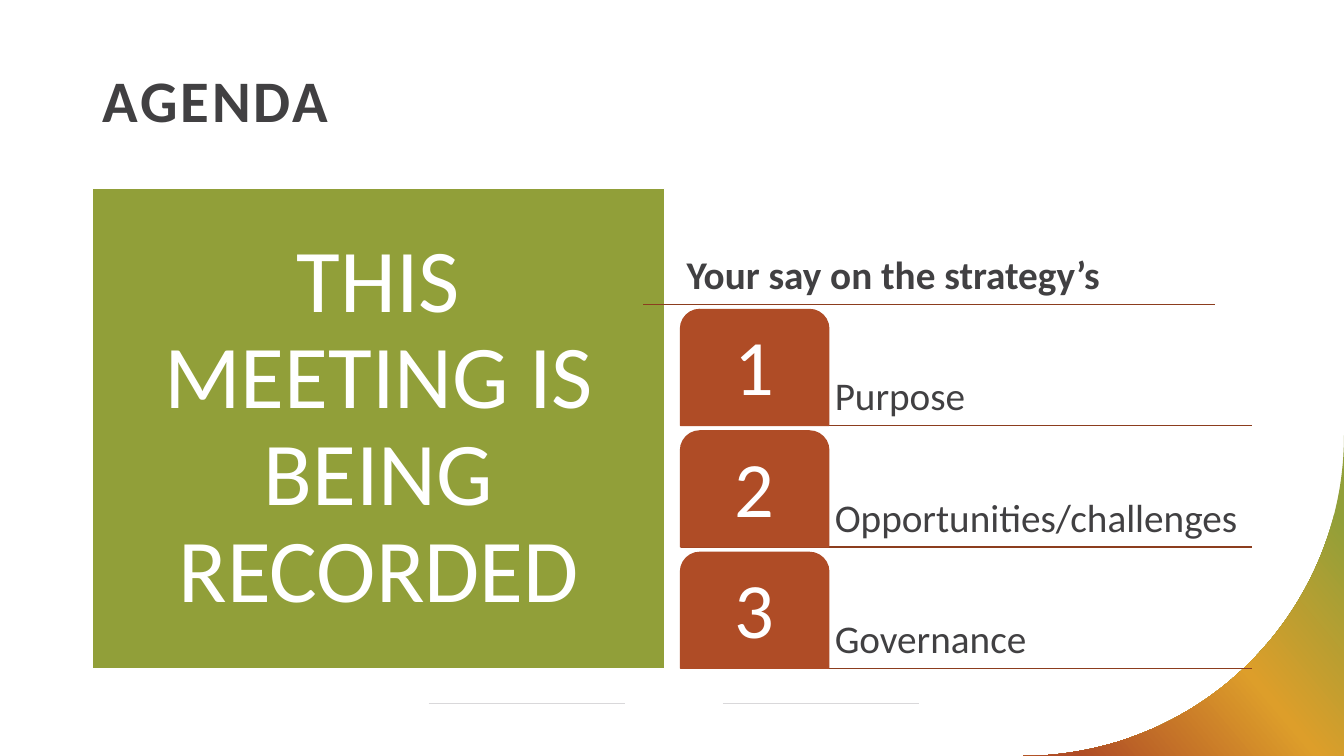
from copy import deepcopy
from math import cos, pi, sin

from pptx import Presentation
from pptx.dml.color import RGBColor
from pptx.enum.shapes import MSO_CONNECTOR as CONNECTOR, MSO_SHAPE as SHAPE
from pptx.enum.text import MSO_ANCHOR as ANCHOR, MSO_AUTO_SIZE as AUTO_SIZE, PP_ALIGN as ALIGN
from pptx.oxml.ns import qn
from pptx.util import Inches, Pt
from lxml.etree import SubElement

SLIDE_WIDTH, SLIDE_HEIGHT = 13.33, 7.5
GREEN, GOLD, RUST = "919F39", "DD9E2A", "AF4C26"
DARK_RUST, GREY, INK, WHITE = "8C3D1E", "D9D8DA", "414042", "FFFFFF"

TOPICS = ["Purpose", "Opportunities/challenges", "Governance"]
TOPIC_TOP, TOPIC_BOTTOM_TOP, ROW_HEIGHT = 3.07, 5.48, 1.15
TOPIC_STEP = (TOPIC_BOTTOM_TOP - TOPIC_TOP) / (len(TOPICS) - 1)
LIST_LEFT, LIST_WIDTH, TAB_WIDTH = 6.75, 5.67, 1.47


def color(hex_string):
    return RGBColor.from_string(hex_string)


class AgendaSlide:
    font_name = "Calibri"
    line_spacing = 0.9

    def __init__(self, presentation):
        self.slide = presentation.slides.add_slide(presentation.slide_layouts[5])
        self.shapes = self.slide.shapes

    def set_text(self, shape, text, size, ink, inset, anchor, align=ALIGN.LEFT, bold=False):
        """Set the only paragraph of a shape and return its run."""
        frame = shape.text_frame
        frame.text = text
        frame.word_wrap = True
        frame.auto_size = AUTO_SIZE.NONE
        frame.vertical_anchor = anchor
        frame.margin_left = frame.margin_right = Inches(inset[0])
        frame.margin_top = frame.margin_bottom = Inches(inset[1])
        paragraph = frame.paragraphs[0]
        paragraph.alignment = align
        paragraph.line_spacing = self.line_spacing
        run = paragraph.runs[0]
        run.font.name = self.font_name
        run.font.size = Pt(size)
        run.font.bold = bold
        run.font.color.rgb = color(ink)
        return run

    def title(self, text, left, top, width, height):
        title = self.shapes.title
        title.left, title.top = Inches(left), Inches(top)
        title.width, title.height = Inches(width), Inches(height)
        run = self.set_text(title, text, 42, INK, (0.1, 0.05), ANCHOR.TOP, bold=True)
        run.font._element.set("spc", "200")

    def rule(self, left, y, width, line_color, weight):
        line = self.shapes.add_connector(
            CONNECTOR.STRAIGHT, Inches(left), Inches(y), Inches(left + width), Inches(y))
        line.line.color.rgb = color(line_color)
        line.line.width = Pt(weight)
        SubElement(line._element.spPr, qn("a:effectLst"))

    def label(self, text, left, top, width, height, bold=False):
        box = self.shapes.add_textbox(Inches(left), Inches(top), Inches(width), Inches(height))
        self.set_text(box, text, 28, INK, (0.06, 0.06), ANCHOR.BOTTOM, bold=bold)

    def panel(self, kind, text, left, top, width, height, fill, outline, size, inset):
        """Add a filled shape with centred white text."""
        panel = self.shapes.add_shape(
            kind, Inches(left), Inches(top), Inches(width), Inches(height))
        panel.shadow.inherit = False
        panel.fill.solid()
        panel.fill.fore_color.rgb = color(fill)
        panel.line.color.rgb = color(outline)
        panel.line.width = Pt(1)
        self.set_text(panel, text, size, WHITE, (inset, inset), ANCHOR.MIDDLE, ALIGN.CENTER)

    def corner(self, radius, stops, angle, steps=90):
        """Fill the bottom right corner outside a quarter circle with a gradient."""
        center_x, center_y = SLIDE_WIDTH - radius, SLIDE_HEIGHT - radius
        arc = [(Inches(center_x + radius * cos(step / steps * pi / 2)),
                Inches(center_y + radius * sin(step / steps * pi / 2)))
               for step in range(steps + 1)]
        builder = self.shapes.build_freeform(*arc[0])
        builder.add_line_segments(arc[1:] + [(Inches(SLIDE_WIDTH), Inches(SLIDE_HEIGHT))])
        corner = builder.convert_to_shape()
        corner.shadow.inherit = False
        corner.line.fill.background()
        corner.fill.gradient()
        corner.fill.gradient_angle = angle
        stop_list = corner._element.spPr.find(qn("a:gradFill")).find(qn("a:gsLst"))
        stop_list.append(deepcopy(stop_list[0]))
        for stop, (position, stop_color) in zip(corner.fill.gradient_stops, stops):
            stop.position = position
            stop.color.rgb = color(stop_color)


def main():
    presentation = Presentation()
    presentation.slide_width = Inches(SLIDE_WIDTH)
    presentation.slide_height = Inches(SLIDE_HEIGHT)
    agenda = AgendaSlide(presentation)

    for left in (4.25, 7.17):
        agenda.rule(left, 6.98, 1.95, GREY, 0.5)
    agenda.corner(3.18, [(0.12, GREEN), (0.5, GOLD), (0.91, RUST)], 220)
    agenda.panel(SHAPE.RECTANGLE, "THIS MEETING IS BEING RECORDED",
                 0.92, 1.87, 5.67, 4.76, GREEN, WHITE, 64, 0.27)
    agenda.title("AGENDA", 0.92, 0.66, 11.5, 1.02)

    agenda.rule(6.38, 3.02, LIST_WIDTH, DARK_RUST, 1)
    agenda.label("Your say on the strategy’s", LIST_LEFT, 1.87, LIST_WIDTH, ROW_HEIGHT, bold=True)
    for index, topic in enumerate(TOPICS):
        top = TOPIC_TOP + index * TOPIC_STEP
        agenda.rule(LIST_LEFT, top + ROW_HEIGHT, LIST_WIDTH, DARK_RUST, 1)
        agenda.label(topic, LIST_LEFT + TAB_WIDTH, top, LIST_WIDTH - TAB_WIDTH, ROW_HEIGHT)
        agenda.panel(SHAPE.ROUND_2_SAME_RECTANGLE, str(index + 1),
                     LIST_LEFT, top, TAB_WIDTH, ROW_HEIGHT, RUST, RUST, 56, 0.12)

    presentation.save("out.pptx")


if __name__ == "__main__":
    main()
